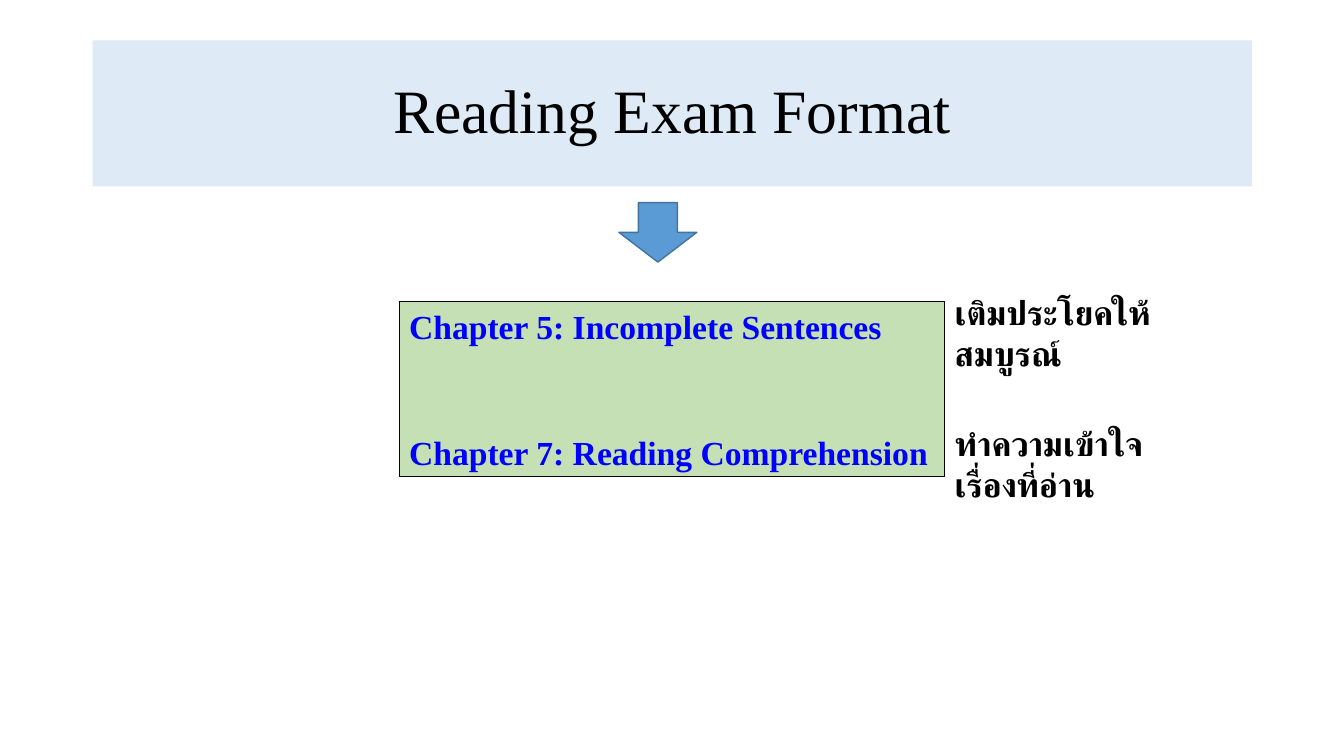
from pptx import Presentation
from pptx.dml.color import RGBColor
from pptx.enum.lang import MSO_LANGUAGE_ID
from pptx.enum.shapes import MSO_SHAPE
from pptx.enum.text import MSO_ANCHOR, MSO_AUTO_SIZE, PP_ALIGN
from pptx.util import Inches, Pt

RECT, DOWN_ARROW = MSO_SHAPE.RECTANGLE, MSO_SHAPE.DOWN_ARROW
TOP, MIDDLE = MSO_ANCHOR.TOP, MSO_ANCHOR.MIDDLE
LEFT, CENTER = PP_ALIGN.LEFT, PP_ALIGN.CENTER
GROW = MSO_AUTO_SIZE.SHAPE_TO_FIT_TEXT
THAI = MSO_LANGUAGE_ID.THAI

BLACK = RGBColor(0x00, 0x00, 0x00)
BLUE = RGBColor(0x00, 0x00, 0xFF)
PALE_BLUE = RGBColor(0xDE, 0xEB, 0xF7)
GREEN = RGBColor(0xC5, 0xE0, 0xB4)
ARROW_FILL = RGBColor(0x5B, 0x9B, 0xD5)
ARROW_LINE = RGBColor(0x43, 0x73, 0x9E)

WIDTH, HEIGHT = Inches(13.33), Inches(7.5)

TITLE_FONT = {"name": "Times New Roman", "size": Pt(44), "bold": False}
CHAPTER_FONT = {"name": "Times New Roman", "size": Pt(24), "bold": True}
NOTE_FONT = {"name": "Calibri", "size": Pt(24), "bold": True,
             "language_id": THAI}

# Boxes as left, top, width, height in percent of the slide
TITLE_BOX = (6.9, 5.33, 86.25, 19.33)
ARROW_BOX = (46.05, 26.8, 5.8, 7.87)
CHAPTER_BOX = (29.7, 39.87, 40.6, 23.2)
NOTES = [
    ("เติมประโยคให้สมบูรณ์", (70.3, 38, 21.6, 12.13)),
    ("ทำความเข้าใจเรื่องที่อ่าน", (70.3, 55.33, 19.35, 12.13)),
]
CHAPTERS = ["Chapter 5: Incomplete Sentences",
            "Chapter 7: Reading Comprehension"]


def place(box):
    """Turn percentages of the slide into lengths."""
    return [int(share * side / 100)
            for share, side in zip(box, (WIDTH, HEIGHT) * 2)]


def set_attributes(target, values):
    for name, value in values.items():
        setattr(target, name, value)


def write(p, text, font, color, **paragraph_format):
    set_attributes(p, paragraph_format)
    r = p.add_run()
    r.text = text
    set_attributes(r.font, font)
    r.font.color.rgb = color


def add_title(slide, text):
    sp = slide.shapes.title
    set_attributes(sp, dict(zip(("left", "top", "width", "height"),
                                place(TITLE_BOX))))
    sp.fill.solid()
    sp.fill.fore_color.rgb = PALE_BLUE
    tf = sp.text_frame
    tf.vertical_anchor = MIDDLE
    write(tf.paragraphs[0], text, TITLE_FONT, BLACK,
          alignment=CENTER, line_spacing=0.9)


def add_block(slide, kind, box, fill, line, line_width):
    sp = slide.shapes.add_shape(kind, *place(box))
    sp.shadow.inherit = False
    sp.fill.solid()
    sp.fill.fore_color.rgb = fill
    sp.line.color.rgb = line
    sp.line.width = Pt(line_width)
    return sp


def add_chapters(slide):
    sp = add_block(slide, RECT, CHAPTER_BOX, GREEN, BLACK, 0.75)
    tf = sp.text_frame
    set_attributes(tf, {"word_wrap": True, "vertical_anchor": TOP,
                        "auto_size": GROW})
    first, last = tf.paragraphs[0], tf.add_paragraph()
    write(first, CHAPTERS[0], CHAPTER_FONT, BLUE, alignment=LEFT)
    write(last, CHAPTERS[1], CHAPTER_FONT, BLUE, alignment=LEFT,
          line_spacing=1.07, space_before=Pt(59))


def add_note(slide, text, box):
    tf = slide.shapes.add_textbox(*place(box)).text_frame
    set_attributes(tf, {"word_wrap": True, "auto_size": GROW})
    write(tf.paragraphs[0], text, NOTE_FONT, BLACK)


def main():
    prs = Presentation()
    prs.slide_width, prs.slide_height = WIDTH, HEIGHT
    slide = prs.slides.add_slide(prs.slide_layouts.get_by_name("Title Only"))

    # Heading and the arrow below it
    add_title(slide, "Reading Exam Format")
    add_block(slide, DOWN_ARROW, ARROW_BOX, ARROW_FILL, ARROW_LINE, 1)

    # Chapters with their Thai explanations
    add_chapters(slide)
    for text, box in NOTES:
        add_note(slide, text, box)

    prs.save("out.pptx")


if __name__ == "__main__":
    main()
